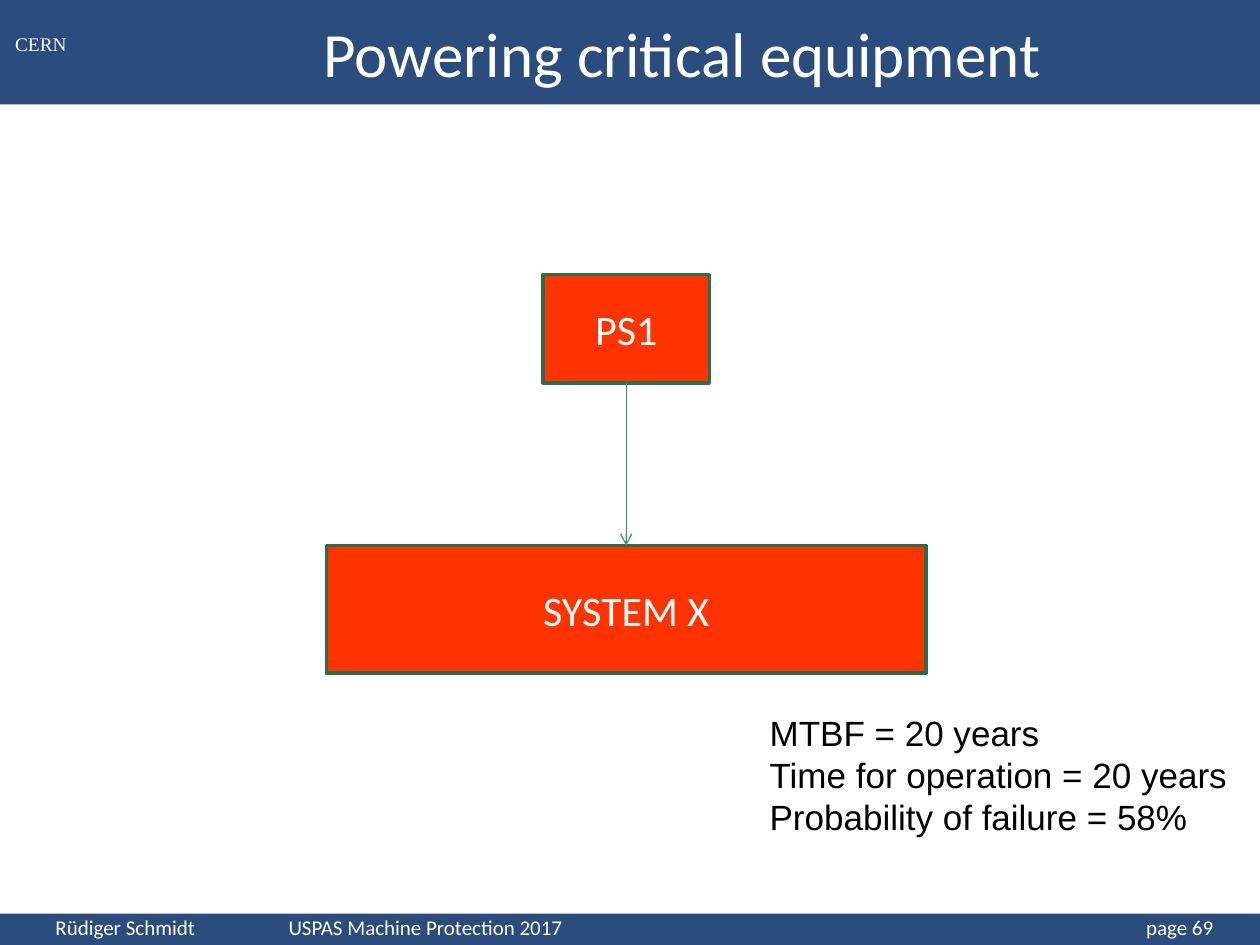
from lxml import etree
from pptx import Presentation
from pptx import util as u
from pptx.dml.color import RGBColor
from pptx.enum import shapes, text
from pptx.oxml.ns import qn

W, H = 10, 7.5
BAR_H, FOOT_H = 0.83, 0.25
AXIS = 4.97  # common centre line of the power supply and the system
NAVY, RED, GREEN, ARROW = "062F67", "FF3300", "26714B", "2F9864"
WHITE, BLACK = "FFFFFF", "000000"
LEFT, CENTER = text.PP_ALIGN.LEFT, text.PP_ALIGN.CENTER
MIDDLE = text.MSO_ANCHOR.MIDDLE


def rgb(value):
    return RGBColor.from_string(value)


def inches(*values):
    return [u.Inches(v) for v in values]


def sub(parent, tag, **attrs):
    return etree.SubElement(parent, qn(tag), attrs)


def put_text(tf, content, size=24, font="Calibri", color=WHITE, align=CENTER,
             anchor=MIDDLE, wrap=True, tabs=()):
    tf.word_wrap = wrap
    tf.auto_size = text.MSO_AUTO_SIZE.NONE
    tf.vertical_anchor = anchor
    for i, line in enumerate(content.split("\n")):
        p = tf.paragraphs[0] if i == 0 else tf.add_paragraph()
        p.alignment = align
        if tabs:
            tab_list = sub(p._p.get_or_add_pPr(), "a:tabLst")
            for pos, side in tabs:
                sub(tab_list, "a:tab", pos=str(u.Inches(pos)), algn=side)
        r = p.add_run()
        r.text = line
        r.font.size = u.Pt(size)
        r.font.name = font
        r.font.color.rgb = rgb(color)


def add_rect(slide, x, y, w, h, fill, line=None, alpha=None):
    sp = slide.shapes.add_shape(shapes.MSO_SHAPE.RECTANGLE, *inches(x, y, w, h))
    sp.shadow.inherit = False
    sp.fill.solid()
    sp.fill.fore_color.rgb = rgb(fill)
    if alpha:
        color = sp._element.spPr.find(qn("a:solidFill")).find(qn("a:srgbClr"))
        sub(color, "a:alpha", val=str(alpha * 1000))
    if line:
        sp.line.color.rgb = rgb(line)
        sp.line.width = u.Pt(2)
    else:
        sp.line.fill.background()
    return sp


def add_block(slide, label, y, w, h):
    sp = add_rect(slide, AXIS - w / 2, y, w, h, RED, line=GREEN)
    put_text(sp.text_frame, label)
    return sp


def add_label(slide, content, x, y, w, h, **style):
    tf = slide.shapes.add_textbox(*inches(x, y, w, h)).text_frame
    put_text(tf, content, **style)
    return tf


def add_arrow(slide, source, target):
    line = slide.shapes.add_connector(shapes.MSO_CONNECTOR.STRAIGHT, 0, 0, 0, 0)
    line.begin_connect(source, 2)
    line.end_connect(target, 0)
    line.line.color.rgb = rgb(ARROW)
    line.line.width = u.Pt(0.75)
    sub(line.line._get_or_add_ln(), "a:tailEnd", type="arrow")
    sub(line._element.spPr, "a:effectLst")


def main():
    prs = Presentation()
    prs.slide_width, prs.slide_height = inches(W, H)
    slide = prs.slides.add_slide(prs.slide_layouts[5])

    # Header and footer bars
    add_rect(slide, 0, 0, W, BAR_H, NAVY, alpha=85)
    add_rect(slide, 0, H - FOOT_H, W, FOOT_H, NAVY, alpha=85)
    add_label(slide, "CERN", -0.01, 0.2, 0.67, 0.29, size=11,
              font="Times New Roman")
    footer = add_label(slide, "Rüdiger Schmidt\tUSPAS Machine Protection 2017\tpage 69",
                       0, H - FOOT_H, 9.83, 0.26, size=12, align=LEFT,
                       anchor=text.MSO_ANCHOR.BOTTOM,
                       tabs=[(1.85, "l"), (9.19, "r")])
    footer.margin_left = u.Inches(0.44)

    # Title, above the header bar in the stacking order
    title = slide.shapes.title
    title.left, title.top, title.width, title.height = inches(
        BAR_H, 0, W - BAR_H, BAR_H)
    put_text(title.text_frame, "Powering critical equipment", size=36)
    slide.shapes._spTree.append(title._element)

    # Power supply feeding the system
    system = add_block(slide, "SYSTEM X", 4.33, 4.76, 1.01)
    supply = add_block(slide, "PS1", 2.18, 1.32, 0.86)
    add_arrow(slide, supply, system)

    # Reliability figures
    add_label(slide, "MTBF = 20 years\nTime for operation = 20 years\n"
              "Probability of failure = 58%", 6.01, 5.6, 3.86, 1.11, size=20,
              font="Arial", color=BLACK, align=LEFT,
              anchor=text.MSO_ANCHOR.TOP, wrap=False)

    prs.save("out.pptx")


if __name__ == "__main__":
    main()
